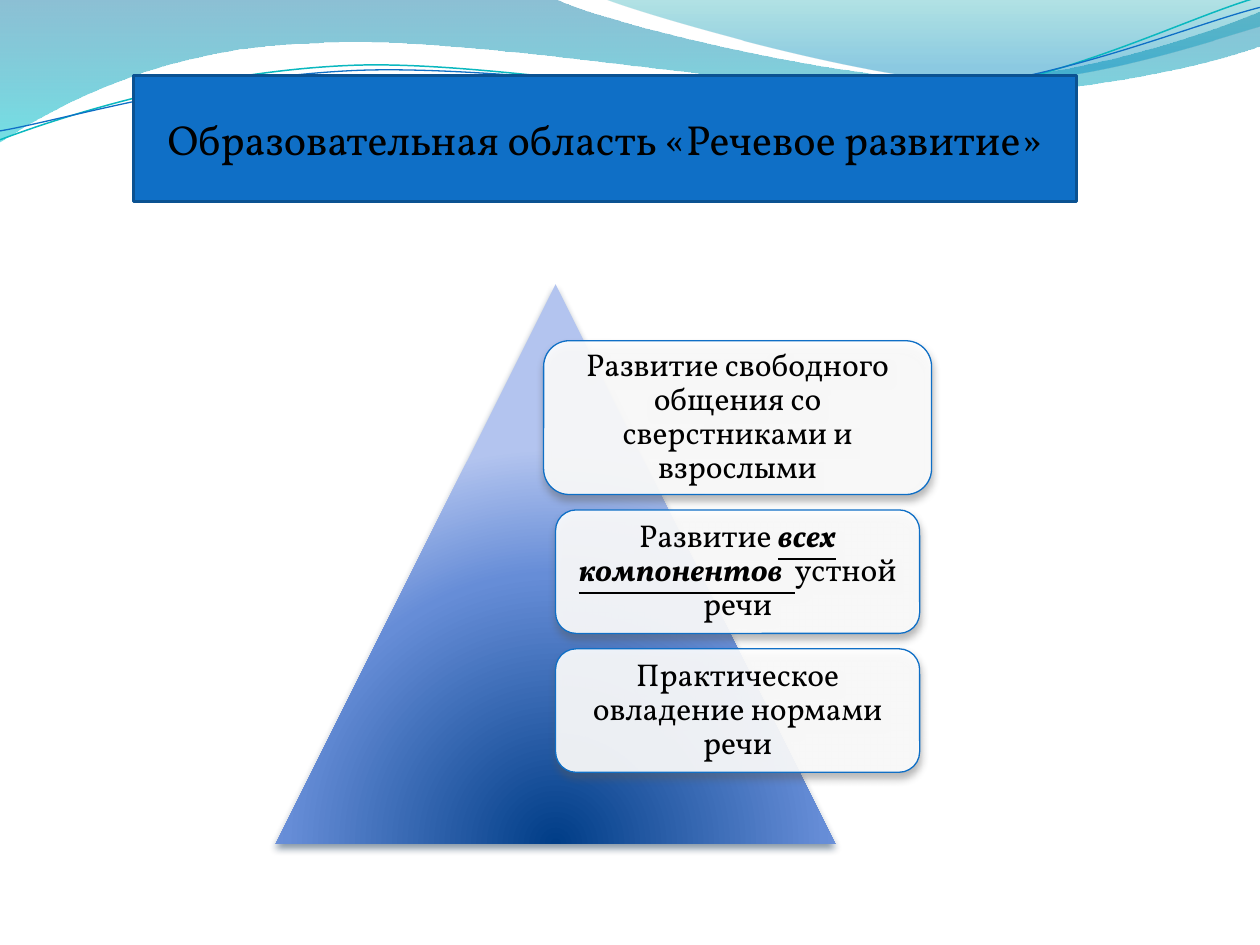
from dataclasses import dataclass

from lxml import etree
from pptx import Presentation
from pptx.dml.color import RGBColor
from pptx.enum import shapes, text
from pptx.oxml import ns
from pptx.util import Cm, Pt


@dataclass(frozen=True)
class Theme:
    font: str = "Vollkorn"
    title_size: int = 24
    card_size: int = 18
    ink: str = "000000"
    white: str = "FFFFFF"
    blue: str = "0F6FC6"
    dark_blue: str = "0B5292"
    teal: str = "0AB8BF"
    pyramid_shadow: str = "042747"
    card_shadow: str = "5A5A5A"
    # Gradient stops: position, colour, opacity (percent)
    wide_wave: tuple = ((0, "0074A1", 45), (100, "00C6CF", 55))
    right_wave: tuple = ((0, "00A1A9", 30), (80, "008BBF", 45))
    pyramid: tuple = ((0, "003D87", 100), (68, "668DD7", 100), (100, "B3C4EF", 100))


THEME = Theme()

# Waves in cm: the box (left, top, right, bottom), then the outline,
# where a pair is a corner and six numbers are a Bézier curve
WIDE_WAVE = ((-.03, -.03, 25.43, 2.87), [
    (0, 0), (11.18, -.03), (12.09, .43, 16.87, 1.6, 19.25, 1.6),
    (21.67, 1.6, 24.33, .66, 25.4, .23), (25.43, .91),
    (24.97, 1.12, 22.1, 1.93, 18.95, 1.9), (15.8, 1.9, 9.7, .71, 6.53, .86),
    (3.28, .91, 1.17, 2.11, -.03, 2.87), (0, 0)])
RIGHT_WAVE = ((12.17, -.03, 25.4, 1.65), [
    (12.17, -.03), (12.93, .28, 17.32, 1.57, 19.53, 1.65),
    (21.74, 1.75, 24.41, .81, 25.4, .53), (25.4, 0), (12.17, -.03)])
TEAL_LINE = ((0, -.05, 25.35, 2.82), [
    (0, 2.82), (1.22, 2.36, 4.01, 1.45, 7.04, 1.32),
    (10.03, 1.19, 15.06, 2.26, 18.11, 2.03), (21.16, 1.8, 23.83, .38, 25.35, -.05)])
BLUE_LINE = ((0, .15, 25.4, 2.64), [
    (0, 2.64), (1.19, 2.44, 4.17, 1.55, 7.19, 1.42),
    (10.24, 1.3, 15.16, 2.13, 18.21, 1.9), (21.23, 1.7, 23.9, .53, 25.4, .15)])

# Cards: width, height, runs as (wording, emphasised)
CARDS = [
    (7.82, 3.1, [("Развитие свободного общения со сверстниками и взрослыми", False)]),
    (7.34, 2.49, [("Развитие ", False), ("всех компонентов  ", True), ("устной речи", False)]),
    (7.34, 2.49, [("Практическое овладение нормами речи", False)]),
]


def add_node(parent, tag, **attributes):
    node = etree.SubElement(parent, ns.qn(tag))
    for key, value in attributes.items():
        node.set(key, str(value))
    return node


def set_line(shape, color, width):
    shape.line.color.rgb = RGBColor.from_string(color)
    shape.line.width = Pt(width)


def set_fill(shape, color, opacity=100):
    shape.fill.solid()
    shape.fill.fore_color.rgb = RGBColor.from_string(color)
    if opacity < 100:
        fill_color = shape._element.spPr.find(".//" + ns.qn("a:srgbClr"))
        add_node(fill_color, "a:alpha", val=opacity * 1000)


def set_gradient(shape, stops, focus=None):
    """Run the stops downwards, or around a focus rectangle (l, t, r, b in percent)."""
    shape.fill.background()
    properties = shape._element.spPr
    gradient = etree.Element(ns.qn("a:gradFill"), rotWithShape="1")
    stop_list = add_node(gradient, "a:gsLst")
    for position, color, opacity in stops:
        stop = add_node(stop_list, "a:gs", pos=position * 1000)
        stop_color = add_node(stop, "a:srgbClr", val=color)
        if opacity < 100:
            add_node(stop_color, "a:alpha", val=opacity * 1000)
    if focus:
        circle = add_node(gradient, "a:path", path="circle")
        add_node(circle, "a:fillToRect", **{s: v * 1000 for s, v in zip("ltrb", focus)})
    else:
        add_node(gradient, "a:lin", ang=90 * 60000, scaled=0)
    properties.replace(properties.find(ns.qn("a:noFill")), gradient)


def set_shadow(shape, color):
    effects = shape._element.spPr.find(ns.qn("a:effectLst"))
    shadow = add_node(effects, "a:outerShdw", blurRad=Pt(4.5), dist=Pt(3),
                      dir=90 * 60000, rotWithShape=0)
    add_node(add_node(shadow, "a:srgbClr", val=color), "a:alpha", val=48000)


def add_box(slide, preset, left, top, width, height):
    shape = slide.shapes.add_shape(preset, Cm(left), Cm(top), Cm(width), Cm(height))
    shape.shadow.inherit = False
    return shape


def write(shape, runs, size):
    frame = shape.text_frame
    frame.word_wrap = True
    frame.vertical_anchor = text.MSO_ANCHOR.MIDDLE
    paragraph = frame.paragraphs[0]
    paragraph.alignment = text.PP_ALIGN.CENTER
    for wording, emphasised in runs:
        run = paragraph.add_run()
        run.text = wording
        font = run.font
        font.name, font.size = THEME.font, Pt(size)
        font.color.rgb = RGBColor.from_string(THEME.ink)
        if emphasised:
            font.bold = font.italic = font.underline = True
    return paragraph


def add_wave(slide, left, top, box, outline, closed):
    """Make a freeform that fills the box and give it a path of true curves."""
    x0, y0, x1, y1 = box
    builder = slide.shapes.build_freeform(Cm(left + x0), Cm(top + y0))
    builder.add_line_segments([(Cm(left + x1), Cm(top + y1))], close=False)
    shape = builder.convert_to_shape()
    shape.shadow.inherit = False
    track = shape._element.spPr.find(".//" + ns.qn("a:path"))
    for segment in list(track):
        track.remove(segment)
    for index, part in enumerate(outline):
        tag = "a:cubicBezTo" if len(part) == 6 else "a:lnTo" if index else "a:moveTo"
        segment = add_node(track, tag)
        for x, y in zip(part[::2], part[1::2]):
            add_node(segment, "a:pt", x=Cm(x - x0), y=Cm(y - y0))
    if closed:
        add_node(track, "a:close")
    return shape


def draw_waves(slide, left, top):
    for geometry, stops in ((WIDE_WAVE, THEME.wide_wave), (RIGHT_WAVE, THEME.right_wave)):
        wave = add_wave(slide, left, top, *geometry, closed=True)
        set_gradient(wave, stops)
        wave.line.fill.background()
    for geometry, color, width in ((TEAL_LINE, THEME.teal, .85), (BLUE_LINE, THEME.blue, .75)):
        curve = add_wave(slide, left, top, *geometry, closed=False)
        curve.fill.background()
        set_line(curve, color, width)


def draw_title(slide, left, top, width, height):
    banner = add_box(slide, shapes.MSO_SHAPE.RECTANGLE, left, top, width, height)
    set_fill(banner, THEME.blue)
    set_line(banner, THEME.dark_blue, 2)
    write(banner, [("Образовательная область «Речевое развитие»", False)], THEME.title_size)


def draw_pyramid(slide, left, top, side):
    pyramid = add_box(slide, shapes.MSO_SHAPE.ISOSCELES_TRIANGLE, left, top, side, side)
    set_gradient(pyramid, THEME.pyramid, focus=(50, 130, 50, -30))
    pyramid.line.fill.background()
    set_shadow(pyramid, THEME.pyramid_shadow)

    # Cards share one centre line and equal gaps
    center, card_top, gap = left + 9.31, top + 1.14, .31
    for width, height, runs in CARDS:
        card = add_box(slide, shapes.MSO_SHAPE.ROUNDED_RECTANGLE,
                       center - width / 2, card_top, width, height)
        set_fill(card, THEME.white, 90)
        set_line(card, THEME.blue, .75)
        set_shadow(card, THEME.card_shadow)
        frame = card.text_frame
        frame.margin_left = frame.margin_right = Cm(.18)
        frame.margin_top = frame.margin_bottom = Cm(.18)
        write(card, runs, THEME.card_size).line_spacing = .9
        card_top += height + gap


def main():
    deck = Presentation()
    deck.slide_width, deck.slide_height = Cm(25.4), Cm(19.05)
    slide = deck.slides.add_slide(deck.slide_layouts[6])
    draw_waves(slide, 0, 0)
    draw_title(slide, 2.69, 1.52, 19.01, 2.54)
    draw_pyramid(slide, 5.56, 5.73, 11.28)
    deck.save("out.pptx")


if __name__ == "__main__":
    main()
